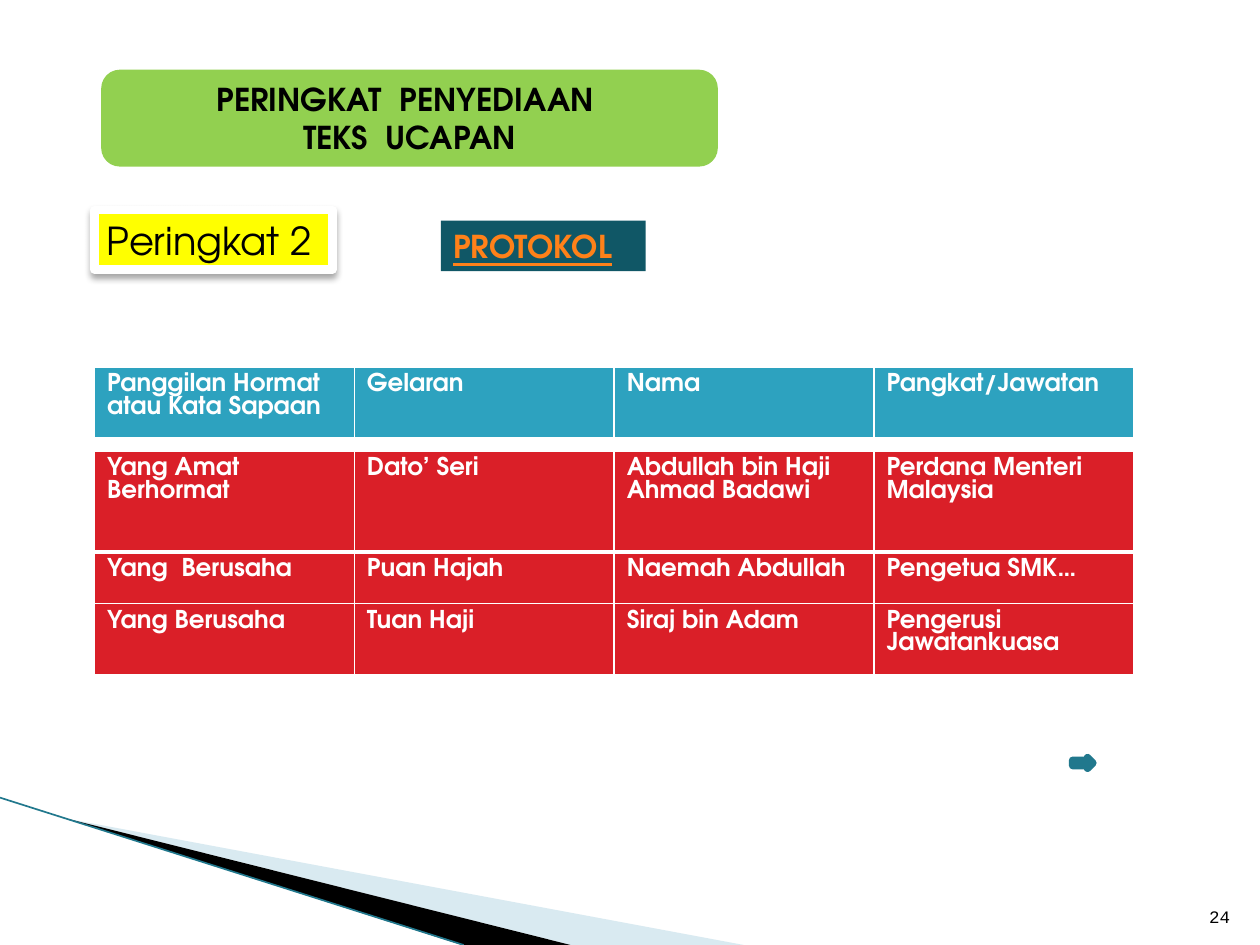
from lxml.etree import SubElement
from pptx import Presentation
from pptx.dml.color import RGBColor
from pptx.enum.shapes import MSO_CONNECTOR as Connector, MSO_SHAPE as Shape
from pptx.enum.text import MSO_ANCHOR as Anchor, PP_ALIGN as Align
from pptx.oxml.ns import qn
from pptx.util import Pt

FONT = "TeX Gyre Adventor"
color = RGBColor.from_string


def style_text(paragraph, size, ink, bold=False, face=FONT):
    paragraph.font.size = Pt(size)
    paragraph.font.name = face
    paragraph.font.bold = bold
    paragraph.font.color.rgb = color(ink)


def add_block(kind, box, fill, line=None, width=0):
    block = slide.shapes.add_shape(kind, *map(Pt, box))
    block.shadow.inherit = False
    block.fill.solid()
    block.fill.fore_color.rgb = color(fill)
    if line:
        block.line.color.rgb = color(line)
        block.line.width = Pt(width)
    else:
        block.line.fill.background()
    block.text_frame.vertical_anchor = Anchor.MIDDLE
    return block


prs = Presentation()
prs.slide_width, prs.slide_height = Pt(720), Pt(540)
slide = prs.slides.add_slide(prs.slide_layouts[6])

wedges = [
    ("A0CBDC", 40, [(39, 468), (425, 540), (326, 540)]),
    ("000000", 100, [(37, 467.5), (326, 540), (264, 540)]),
]
for fill, opacity, corners in wedges:
    start, *rest = [(Pt(x), Pt(y)) for x, y in corners]
    builder = slide.shapes.build_freeform(*start)
    builder.add_line_segments(rest)
    wedge = builder.convert_to_shape()
    wedge.shadow.inherit = False
    wedge.fill.solid()
    wedge.fill.fore_color.rgb = color(fill)
    wedge.line.fill.background()
    tone = wedge.fill._xPr.find(qn("a:solidFill"))[0]
    SubElement(tone, qn("a:alpha"), val=str(opacity * 1000))

edge = slide.shapes.add_connector(Connector.STRAIGHT, Pt(0), Pt(455.8), Pt(265), Pt(540))
edge.line.color.rgb = color("21788D")
edge.line.width = Pt(0.95)
SubElement(edge._element.spPr, qn("a:effectLst"))

title = add_block(Shape.ROUNDED_RECTANGLE, (60, 42, 348, 51), "92D050", "92D050", 4.33)
title.text_frame.text = "PERINGKAT  PENYEDIAAN \nTEKS  UCAPAN"
for paragraph in title.text_frame.paragraphs:
    paragraph.alignment = Align.CENTER
    style_text(paragraph, 18, "000000", True)

stage = add_block(Shape.RECTANGLE, (54, 120, 136, 34), "FFFF00", "FFFFFF", 5)
stage.text_frame.text = "Peringkat 2"
stage_line = stage.text_frame.paragraphs[0]
stage_line.alignment = Align.LEFT
style_text(stage_line, 22, "000000")
effects = stage._element.spPr.find(qn("a:effectLst"))
shade = SubElement(effects, qn("a:outerShdw"), blurRad=str(Pt(4)), dist=str(Pt(3)), dir="5400000")
shade_color = SubElement(shade, qn("a:srgbClr"), val="000000")
SubElement(shade_color, qn("a:alpha"), val="35000")

protocol = add_block(Shape.RECTANGLE, (252, 126, 117, 29), "105766")
protocol.text_frame.text = "PROTOKOL"
protocol_line = protocol.text_frame.paragraphs[0]
protocol_line.alignment = Align.LEFT
style_text(protocol_line, 18, "FF8119", True)
protocol_line.font.underline = True

headings = [["Panggilan Hormat atau Kata Sapaan", "Gelaran", "Nama", "Pangkat/Jawatan"]]
guests = [
    ["Yang Amat Berhormat", "Dato’ Seri", "Abdullah bin Haji Ahmad Badawi", "Perdana Menteri Malaysia"],
    ["Yang  Berusaha", "Puan Hajah", "Naemah Abdullah", "Pengetua SMK…"],
    ["Yang Berusaha", "Tuan Haji", "Siraj bin Adam", "Pengerusi Jawatankuasa"],
]
grids = [
    (210, [41], "2DA2BF", headings),
    (258, [57.5, 29.5, 40.5], "DA1F28", guests),
]
for top, heights, fill, rows in grids:
    table = slide.shapes.add_table(
        len(rows), 4, Pt(54), Pt(top), Pt(594), Pt(sum(heights))
    ).table
    for column in table.columns:
        column.width = Pt(148.5)
    for r, (height, texts) in enumerate(zip(heights, rows)):
        table.rows[r].height = Pt(height)
        for c, text in enumerate(texts):
            cell = table.cell(r, c)
            cell.text = text
            style_text(cell.text_frame.paragraphs[0], 14, "FFFFFF", True)
            borders = cell._tc.get_or_add_tcPr()
            for side in ("lnL", "lnR", "lnT", "lnB"):
                thick = (side == "lnB" and r == 0) or (side == "lnT" and r == 1)
                border = SubElement(borders, qn(f"a:{side}"), w=str(Pt(3 if thick else 1)))
                SubElement(SubElement(border, qn("a:solidFill")), qn("a:srgbClr"), val="FFFFFF")
            cell.fill.solid()
            cell.fill.fore_color.rgb = color(fill)

number = slide.shapes.add_textbox(Pt(681), Pt(504.5), Pt(29), Pt(29)).text_frame
number.word_wrap = True
number.vertical_anchor = Anchor.BOTTOM
number.text = "24"
number.paragraphs[0].alignment = Align.RIGHT
style_text(number.paragraphs[0], 10, "000000", face="Courier New")

add_block(Shape.RIGHT_ARROW, (613, 433, 11.5, 6), "2DA2BF", "21788D", 4.33)

prs.save("out.pptx")
